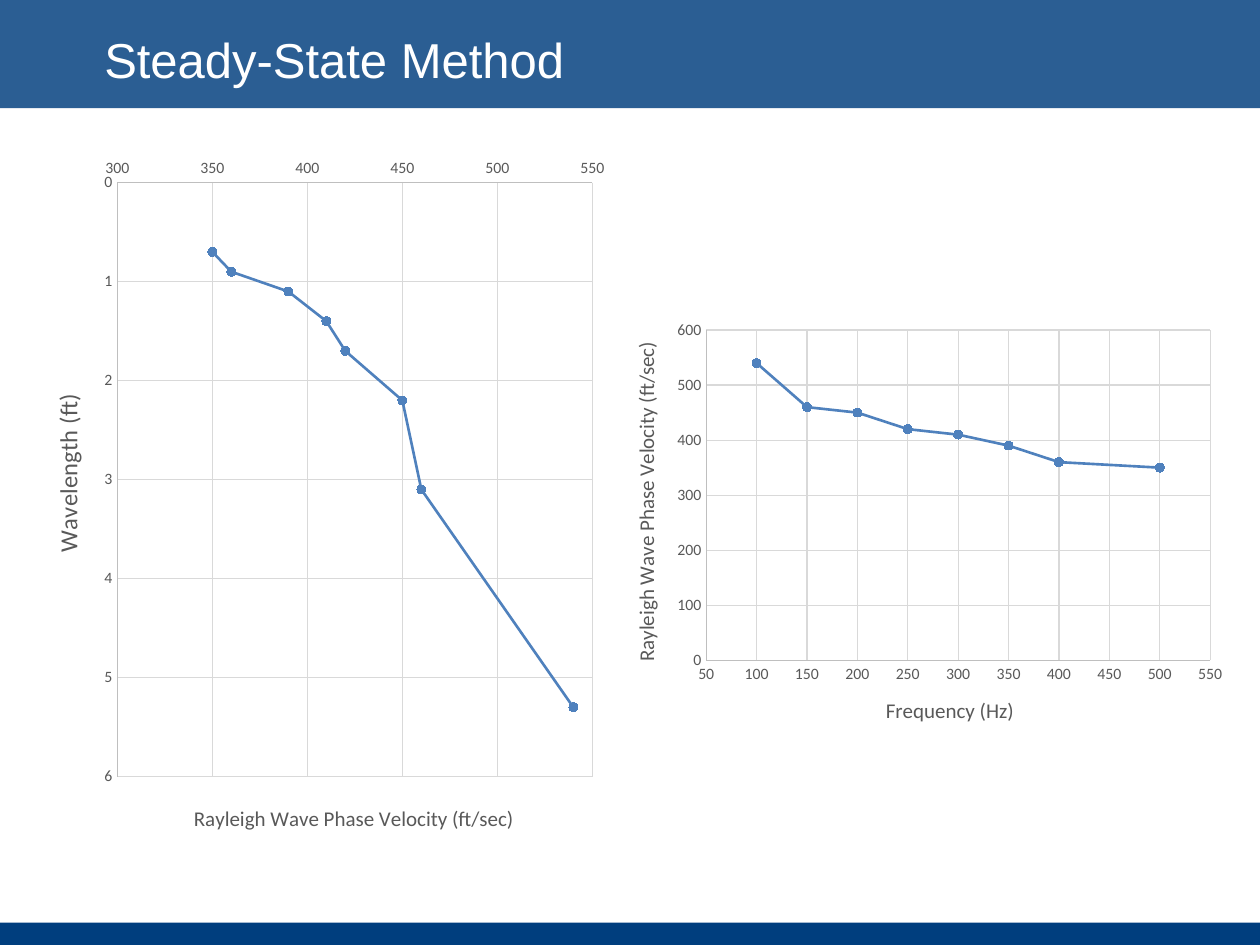
from lxml import etree
from pptx import Presentation
from pptx import util as u
from pptx.chart import data as chartdata
from pptx.dml import color
from pptx.enum import chart as charts, shapes, text
from pptx.oxml import ns

Pt = u.Pt
COLORS = {"navy": "003E7E", "white": "FFFFFF", "gray": "595959",
          "axis": "BFBFBF", "grid": "D9D9D9", "series": "4F81BD"}


def paint(target, name):
    target.solid()
    target.fore_color.rgb = color.RGBColor.from_string(COLORS[name])


def set_layout(parent, index, **values):
    for old in parent.findall(ns.qn("c:layout")):
        parent.remove(old)
    layout = etree.Element(ns.qn("c:layout"))
    manual = etree.SubElement(layout, ns.qn("c:manualLayout"))
    if "w" in values:
        etree.SubElement(manual, ns.qn("c:layoutTarget")).set("val", "inner")
    for key in "xy":
        etree.SubElement(manual, ns.qn(f"c:{key}Mode")).set("val", "edge")
    for key, value in values.items():
        etree.SubElement(manual, ns.qn(f"c:{key}")).set("val", str(value))
    parent.insert(index, layout)


deck = Presentation()
deck.slide_width, deck.slide_height = Pt(720), Pt(540)
page = deck.slides.add_slide(deck.slide_layouts[5])

divider = page.shapes.add_connector(shapes.MSO_CONNECTOR.STRAIGHT,
                                    Pt(570.2), Pt(13.7), Pt(570.2), Pt(49.7))
divider.line.width = Pt(0.75)
paint(divider.line.fill, "white")
etree.SubElement(divider._element.spPr, ns.qn("a:effectLst"))

for top, height, alpha in [(527.2, 12.8, None), (0, 61.9, "83000")]:
    band = page.shapes.add_shape(shapes.MSO_SHAPE.RECTANGLE, 0, Pt(top), Pt(720), Pt(height))
    band.shadow.inherit = False
    paint(band.fill, "navy")
    band.line.fill.background()
    if alpha:
        tint = band.fill._xPr.find(".//" + ns.qn("a:srgbClr"))
        etree.SubElement(tint, ns.qn("a:alpha")).set("val", alpha)

title = page.shapes.title
title._element.getparent().append(title._element)
title.left, title.top, title.width, title.height = Pt(52.4), Pt(13.7), Pt(487.4), Pt(41.8)
frame = title.text_frame
frame.word_wrap = True
frame.vertical_anchor = text.MSO_ANCHOR.MIDDLE
frame.margin_bottom = Pt(6)
para = frame.paragraphs[0]
para.alignment = text.PP_ALIGN.LEFT
span = para.add_run()
span.text = "Steady-State Method"
span.font.name, span.font.size = "Arial", Pt(28)
paint(span.font.fill, "white")

frequencies = [500, 400, 350, 300, 250, 200, 150, 100]
velocities = [350, 360, 390, 410, 420, 450, 460, 540]
wavelengths = [0.7, 0.9, 1.1, 1.4, 1.7, 2.2, 3.1, 5.3]
velocity_title = "Rayleigh Wave Phase Velocity (ft/sec)"

plots = [
    {"box": (14.4, 82.8, 337.7, 407.5), "fill": True,
     "inner": {"x": 0.156, "y": 0.053, "w": 0.804, "h": 0.833},
     "points": zip(velocities, wavelengths),
     "axes": [(velocity_title, 12, 300, 550, 50, "General", False, 0.279, 0.919),
              ("Wavelength (ft)", 14, 0, 6, 1, "0", True, 0.036, 0.343)]},
    {"box": (345.6, 178.6, 360, 250.6), "fill": False,
     "inner": {"x": 0.161, "y": 0.04, "w": 0.8, "h": 0.753},
     "points": zip(frequencies, velocities),
     "axes": [("Frequency (Hz)", 12, 50, 550, 50, "General", False, 0.44, 0.866),
              (velocity_title, 12, 0, 600, 100, "General", False, 0.037, 0.058)]},
]

for plot in plots:
    data = chartdata.XyChartData()
    points = data.add_series("Series 1")
    for x, y in plot["points"]:
        points.add_data_point(x, y)
    chart = page.shapes.add_chart(charts.XL_CHART_TYPE.XY_SCATTER_LINES,
                                  *map(Pt, plot["box"]), data).chart
    chart.has_legend = chart.has_title = False
    chart.font.name, chart.font.size = "Calibri", Pt(10)
    chart.plots[0].vary_by_categories = False

    if plot["fill"]:
        props = etree.Element(ns.qn("c:spPr"))
        solid = etree.SubElement(props, ns.qn("a:solidFill"))
        etree.SubElement(solid, ns.qn("a:srgbClr")).set("val", COLORS["white"])
        chart._chartSpace.find(ns.qn("c:txPr")).addprevious(props)
    set_layout(chart._chartSpace.find(".//" + ns.qn("c:plotArea")), 0, **plot["inner"])

    series = chart.plots[0].series[0]
    series.smooth = False
    series.format.line.width = Pt(1.5)
    paint(series.format.line.fill, "series")
    series.marker.style = charts.XL_MARKER_STYLE.CIRCLE
    series.marker.size = 5
    paint(series.marker.format.fill, "series")
    paint(series.marker.format.line.fill, "series")

    axes = zip((chart.category_axis, chart.value_axis), ("0", "-5400000"), plot["axes"])
    for axis, rotation, settings in axes:
        label, size, low, high, step, number_format, reverse, x, y = settings
        axis.minimum_scale, axis.maximum_scale, axis.major_unit = low, high, step
        axis.reverse_order = reverse
        axis.crosses = charts.XL_AXIS_CROSSES.MINIMUM
        axis.major_tick_mark = axis.minor_tick_mark = charts.XL_TICK_MARK.NONE
        axis.tick_labels.number_format = number_format
        axis.tick_labels.number_format_is_linked = False
        axis.tick_labels.font.name, axis.tick_labels.font.size = "Calibri", Pt(9)
        paint(axis.tick_labels.font.fill, "gray")
        axis.has_major_gridlines = True
        for line, name in [(axis.format.line, "axis"),
                           (axis.major_gridlines.format.line, "grid")]:
            line.width = Pt(0.75)
            paint(line.fill, name)
        heading = axis.axis_title
        span = heading.text_frame.paragraphs[0].add_run()
        span.text = label
        span.font.name, span.font.size, span.font.bold = "Calibri", Pt(size), False
        paint(span.font.fill, "gray")
        body = heading._element.find(".//" + ns.qn("a:bodyPr"))
        body.set("rot", rotation)
        body.set("vert", "horz")
        set_layout(heading._element, 1, x=x, y=y)

deck.save("out.pptx")
